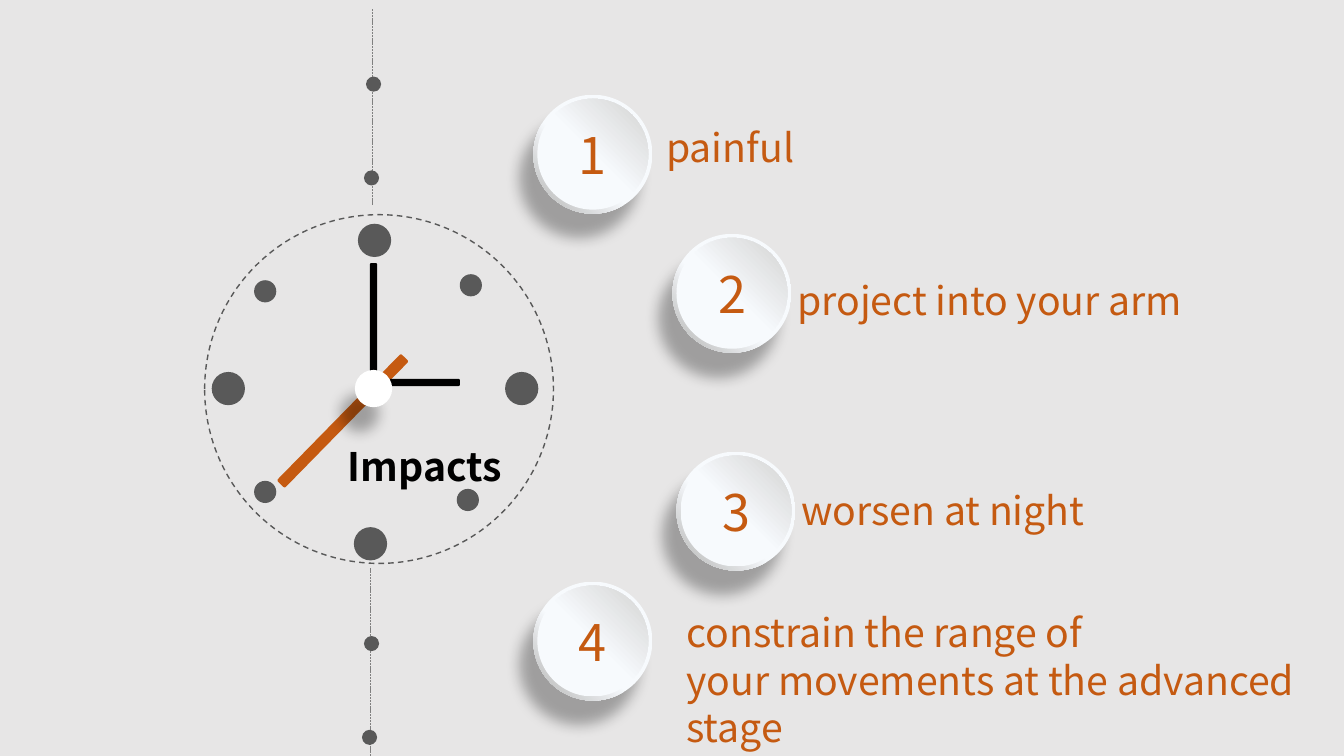
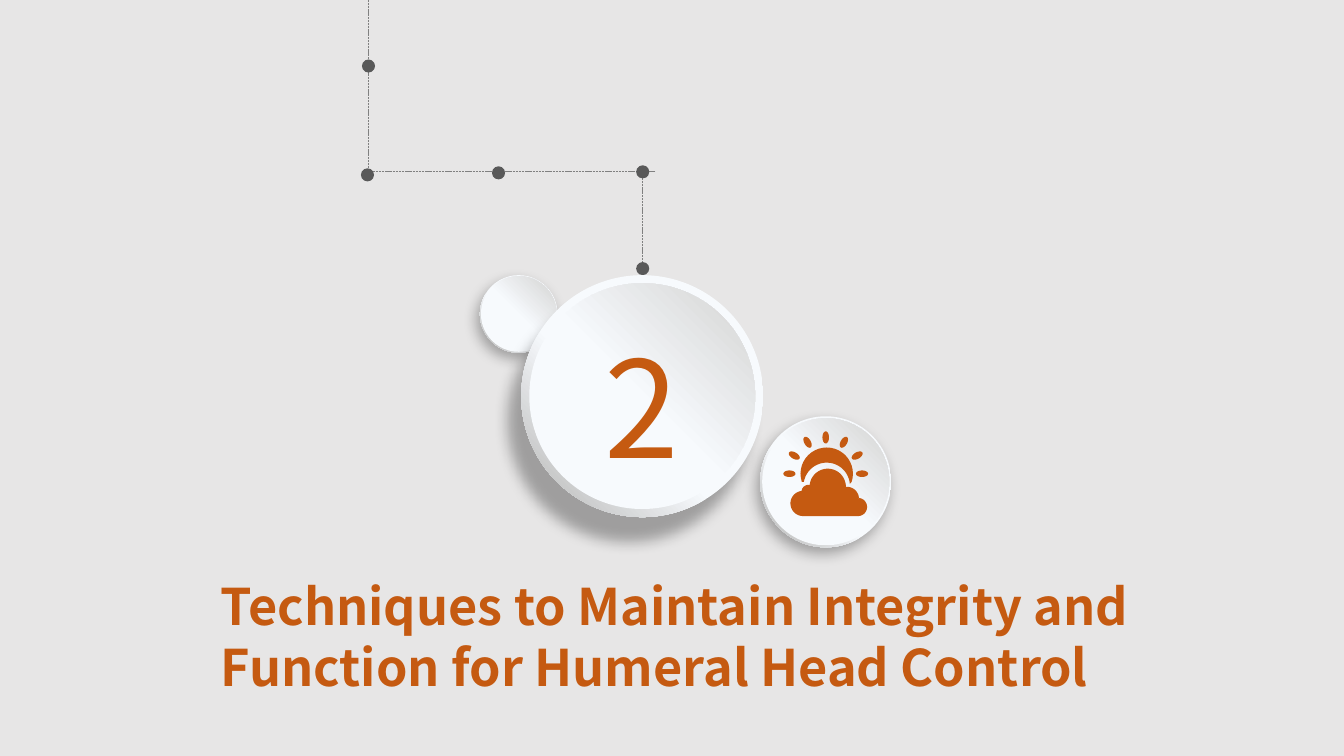
from dataclasses import dataclass
from math import cos, radians, sin

from lxml.etree import SubElement
from pptx import Presentation
from pptx.dml.color import RGBColor
from pptx.enum.dml import MSO_LINE
from pptx.enum.shapes import MSO_CONNECTOR, MSO_SHAPE
from pptx.enum.text import MSO_ANCHOR, MSO_AUTO_SIZE, PP_ALIGN
from pptx.oxml.ns import qn
from pptx.util import Emu, Pt

PX = 9144


@dataclass(frozen=True)
class Theme:
    background: RGBColor = RGBColor(0xE7, 0xE6, 0xE6)
    accent: RGBColor = RGBColor(0xC5, 0x5A, 0x11)
    dot: RGBColor = RGBColor(0x59, 0x59, 0x59)
    thread: RGBColor = RGBColor(0x80, 0x80, 0x80)
    black: RGBColor = RGBColor(0, 0, 0)
    white: RGBColor = RGBColor(0xFF, 0xFF, 0xFF)
    rim: tuple = ((57, "F7FAFD"), (92, "BFBFBF"), (100, "A6A6A6"))
    face: tuple = ((49, "F7FAFD"), (92, "D9D9D9"), (100, "BFBFBF"))
    font: str = "Noto Sans CJK SC"
    body: int = 28
    heading: int = 36
    chapter: int = 96


def px(*lengths):
    return [Emu(round(length * PX)) for length in lengths]


def arc(cx, cy, r, start, end, steps=24):
    angles = [radians(start + (end - start) * i / steps) for i in range(steps + 1)]
    return [(cx + r * cos(a), cy + r * sin(a)) for a in angles]


def ray(cx, cy, distance, length, width, angle):
    turn = radians(angle)
    return [
        (cx + (distance + x * length / 2) * cos(turn) - y * width / 2 * sin(turn),
         cy + (distance + x * length / 2) * sin(turn) + y * width / 2 * cos(turn))
        for x, y in arc(0, 0, 1, 0, 360)
    ]


class Deck:
    """Holds the style and the current slide, and draws each kind of element."""

    def __init__(self, theme):
        self.theme = theme
        self.prs = Presentation()
        self.prs.slide_width, self.prs.slide_height = px(1333, 750)
        backdrop = self.prs.slide_master.background.fill
        backdrop.solid()
        backdrop.fore_color.rgb = theme.background

    def new_slide(self):
        self.slide = self.prs.slides.add_slide(self.prs.slide_layouts[5])
        self.shapes = self.slide.shapes

    def set_text(self, frame, lines, size, color, bold=False,
                 align=PP_ALIGN.LEFT, anchor=MSO_ANCHOR.TOP):
        frame.word_wrap = True
        frame.auto_size = MSO_AUTO_SIZE.NONE
        frame.vertical_anchor = anchor
        frame.text = lines
        for paragraph in frame.paragraphs:
            paragraph.alignment = align
            paragraph.font.name = self.theme.font
            paragraph.font.size = Pt(size)
            paragraph.font.bold = bold
            paragraph.font.color.rgb = color

    def title(self, words, box, size, color):
        heading = self.shapes.title
        heading.left, heading.top, heading.width, heading.height = px(*box)
        self.set_text(heading.text_frame, words, size, color, bold=True)

    def text(self, words, box, size, **layout):
        frame = self.shapes.add_textbox(*px(*box)).text_frame
        self.set_text(frame, words, size, self.theme.accent, **layout)

    def number(self, digit, box, size):
        self.text(digit, box, size, align=PP_ALIGN.CENTER, anchor=MSO_ANCHOR.MIDDLE)

    def finish(self, shape, color=None):
        shape.shadow.inherit = False
        shape.line.fill.background()
        if color is None:
            shape.fill.background()
        else:
            shape.fill.solid()
            shape.fill.fore_color.rgb = color
        return shape

    def circle(self, left, top, size, color=None):
        disc = self.shapes.add_shape(MSO_SHAPE.OVAL, *px(left, top, size, size))
        return self.finish(disc, color)

    def bar(self, left, top, width, height, color, rotation=0):
        hand = self.shapes.add_shape(
            MSO_SHAPE.ROUNDED_RECTANGLE, *px(left, top, width, height))
        self.finish(hand, color).rotation = rotation

    def ring(self, left, top, size):
        outline = self.circle(left, top, size).line
        outline.color.rgb = self.theme.dot
        outline.width = Pt(1)
        outline.dash_style = MSO_LINE.DASH

    def thread(self, x1, y1, x2, y2):
        strand = self.shapes.add_connector(MSO_CONNECTOR.STRAIGHT, *px(x1, y1, x2, y2))
        strand.line.color.rgb = self.theme.thread
        strand.line.width = Pt(0.5)
        strand.line.dash_style = MSO_LINE.SQUARE_DOT
        SubElement(strand._element.spPr, qn("a:effectLst"))

    def gradient(self, shape, stops, angle):
        properties = shape._element.spPr
        properties.remove(properties.find(qn("a:noFill")))
        blend = SubElement(properties, qn("a:gradFill"), rotWithShape="1")
        stop_list = SubElement(blend, qn("a:gsLst"))
        for position, color in stops:
            stop = SubElement(stop_list, qn("a:gs"), pos=str(position * 1000))
            SubElement(stop, qn("a:srgbClr"), val=color)
        SubElement(blend, qn("a:lin"), ang=str(angle * 60000), scaled="0")
        properties.find(qn("a:ln")).addprevious(blend)

    def shadow(self, shape, distance):
        effects = shape._element.spPr.find(qn("a:effectLst"))
        cast = SubElement(
            effects, qn("a:outerShdw"), blurRad=str(Pt(10)), dist=str(Pt(distance)),
            dir=str(120 * 60000), algn="ctr", rotWithShape="0")
        tint = SubElement(cast, qn("a:srgbClr"), val=str(self.theme.black))
        SubElement(tint, qn("a:alpha"), val="31000")

    def button(self, left, top, size, rim, distance):
        base = self.circle(left, top, size)
        self.gradient(base, self.theme.rim, 135)
        self.shadow(base, distance)
        face = self.circle(left + rim, top + rim, size - 2 * rim)
        self.gradient(face, self.theme.face, 315)

    def outline(self, contours, color):
        scaled = [[px(*point) for point in contour] for contour in contours]
        builder = self.shapes.build_freeform(*scaled[0][0], scale=1.0)
        for index, (start, *rest) in enumerate(scaled):
            if index:
                builder.move_to(*start)
            builder.add_line_segments(rest, close=True)
        self.finish(builder.convert_to_shape(), color)


def impacts_slide(deck):
    theme = deck.theme
    deck.new_slide()
    deck.title("Impacts", (335, 434, 190, 57), theme.body, theme.black)

    for dx, dy, end in ((0, 0, 203), (-2, 555, 750)):
        deck.thread(369 + dx, 9 + dy, 369 + dx, end)
        for left, top in ((363, 76), (361, 169)):
            deck.circle(left + dx, top + dy, 15, theme.dot)

    deck.bar(252, 412, 176, 11, theme.accent, rotation=314.4)
    deck.bar(367, 261, 7, 115, theme.black)
    deck.bar(377, 376, 79, 7, theme.black)
    deck.shadow(deck.circle(352, 367, 37, theme.white), 20)
    hour_marks = {
        33: ((210, 369), (501, 369), (351, 523), (355, 222)),
        22: ((252, 278), (252, 477), (453, 485), (456, 272)),
    }
    for size, corners in hour_marks.items():
        for left, top in corners:
            deck.circle(left, top, size, theme.dot)
    deck.ring(203, 213, 346)

    impacts = (
        ((529, 94), "painful", (651, 117, 160, 57)),
        ((667, 232), "project into your arm", (781, 269, 419, 57)),
        ((671, 448), "worsen at night", (785, 478, 314, 57)),
        ((529, 577), "constrain the range of\nyour movements at the advanced stage",
         (671, 599, 662, 151)),
    )
    for order, ((left, top), words, box) in enumerate(impacts, start=1):
        deck.button(left, top, 118, 4, 20)
        deck.number(str(order), (left, top, 118, 118), theme.heading)
        deck.text(words, box, theme.body)


def chapter_slide(deck):
    theme = deck.theme
    deck.new_slide()
    deck.title("Techniques to Maintain Integrity and Function for Humeral Head Control",
               (209, 566, 1045, 131), theme.heading, theme.accent)

    deck.button(476, 273, 77, 1, 5)
    for strand in ((365, 0, 365, 170), (650, 170, 364, 170), (637, 171, 637, 269)):
        deck.thread(*strand)
    for left, top in ((359, 59), (358, 167), (488, 165), (631, 164), (631, 260)):
        deck.circle(left, top, 13, theme.dot)
    deck.button(517, 273, 240, 8, 20)
    deck.number("2", (557, 317, 160, 170), theme.chapter)

    deck.button(754, 413, 130, 2, 5)
    rays = [ray(819, 470, 36, 12, 6.5, angle) for angle in range(-180, 1, 30)]
    sun = arc(820, 470, 26, 162, 378) + arc(820, 482, 23, 355, 190)
    cloud = (arc(851, 503, 9, 90, -90) + arc(840, 495, 12, 0, -95)
             + arc(821, 483, 18, 0, -175) + arc(802, 488, 7, -85, -180)
             + arc(796.5, 499.5, 12.5, -95, -270))
    deck.outline([*rays, sun, cloud], theme.accent)


def main():
    deck = Deck(Theme())
    impacts_slide(deck)
    chapter_slide(deck)
    deck.prs.save("out.pptx")


if __name__ == "__main__":
    main()
